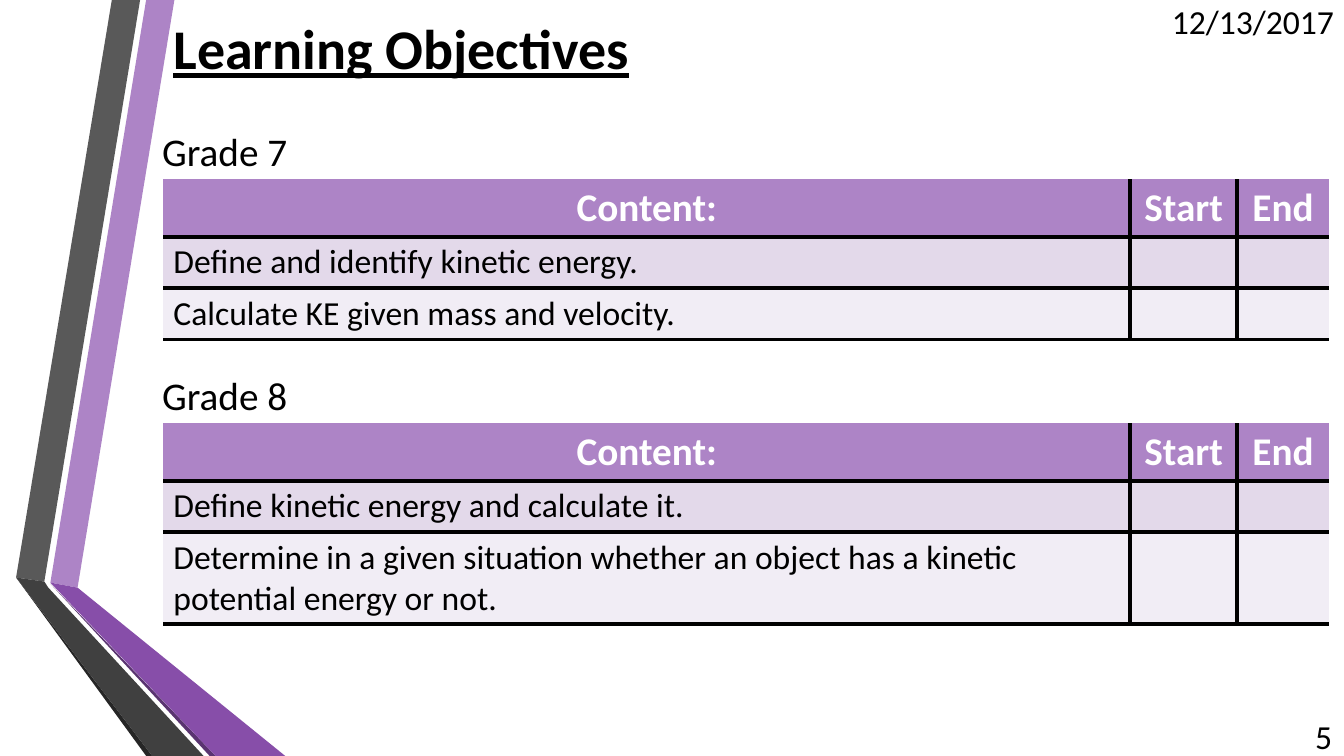
from dataclasses import dataclass

from lxml.etree import SubElement as Sub
from pptx import Presentation
from pptx.dml.color import RGBColor as Rgb
from pptx.enum.text import MSO_ANCHOR as Anchor, MSO_AUTO_SIZE as Fit, PP_ALIGN as Align
from pptx.oxml.ns import qn
from pptx.util import Inches, Pt

HUES = {
    "black": "000000", "white": "FFFFFF", "lilac": "AD84C6", "purple": "874EA9",
    "plum": "5A3471", "grey": "595959", "dark": "404040", "coal": "262626",
    "tint": "E3D9EA", "pale": "F1EDF5",
}
FONT = "Calibri"
HEADS = ("Content:", "Start", "End")
COLS = (9.59, 1.06, 0.91)
LEFT = 1.62


@dataclass
class Band:
    hue: str
    dots: list[tuple[float, float]]


@dataclass
class Label:
    text: str
    box: tuple[float, float, float, float]
    size: int
    align: Align = Align.LEFT
    anchor: Anchor = Anchor.MIDDLE
    wrap: bool = True


@dataclass
class Grade:
    name: str
    top: float
    goals: list[str]
    rows: tuple[float, ...]


BANDS = [
    Band("lilac", [(0.5, 5.78), (0.77, 5.83), (1.73, 0), (1.45, 0)]),
    Band("grey", [(1.39, 0), (1.11, 0), (0.16, 5.73), (0.44, 5.77)]),
    Band("coal", [(0.16, 5.73), (1.45, 7.5), (1.51, 7.5)]),
    Band("plum", [(0.5, 5.79), (2.08, 7.5), (2.14, 7.5)]),
    Band("purple", [(0.5, 5.78), (2.14, 7.5), (2.83, 7.5), (0.77, 5.83)]),
    Band("dark", [(2.02, 7.5), (0.48, 5.83), (0.44, 5.77), (0.16, 5.73), (1.51, 7.5)]),
]
GRADES = [
    Grade("Grade 7", 1.78,
          ["Define and identify kinetic energy.",
           "Calculate KE given mass and velocity."],
          (0.57, 0.51, 0.51)),
    Grade("Grade 8", 4.2,
          ["Define kinetic energy and calculate it.",
           "Determine in a given situation whether an object has a kinetic "
           "potential energy or not."],
          (0.57, 0.51, 0.91)),
]
MARKS = [
    Label("12/13/2017", (11.29, 0.01, 2.04, 0.4), 24, Align.RIGHT),
    Label("5", (12.58, 7.1, 0.73, 0.4), 24, Align.RIGHT),
]


def style(para, hue: str, align: Align = Align.LEFT, **looks) -> None:
    para.alignment = align
    for key, val in {"name": FONT, **looks}.items():
        setattr(para.font, key, val)
    para.font.color.rgb = Rgb.from_string(HUES[hue])


def place(shape, box: tuple[float, ...]) -> None:
    for key, val in zip(("left", "top", "width", "height"), box):
        setattr(shape, key, Inches(val))


def draw_band(slide, band: Band) -> None:
    dots = [(Inches(x), Inches(y)) for x, y in band.dots]
    pen = slide.shapes.build_freeform(*dots[0])
    pen.add_line_segments(dots[1:], close=True)
    shape = pen.convert_to_shape()
    shape.shadow.inherit = False
    shape.fill.solid()
    shape.fill.fore_color.rgb = Rgb.from_string(HUES[band.hue])
    shape.line.fill.background()


def draw_label(slide, label: Label) -> None:
    box = slide.shapes.add_textbox(*map(Inches, label.box))
    frame = box.text_frame
    frame.word_wrap = label.wrap
    frame.vertical_anchor = label.anchor
    frame.text = label.text
    style(frame.paragraphs[0], "black", label.align, size=Pt(label.size))


def set_edges(cell, edges: dict[str, bool]) -> None:
    props = cell._tc.get_or_add_tcPr()
    for spot, (tag, shown) in enumerate(edges.items()):
        line = props.makeelement(qn(f"a:{tag}"), {"w": str(Pt(3) if shown else 0)})
        props.insert(spot, line)
        if shown:
            fill = Sub(line, qn("a:solidFill"))
            Sub(fill, qn("a:srgbClr"), val=HUES["black"])
        else:
            Sub(line, qn("a:noFill"))


def draw_grade(slide, grade: Grade) -> None:
    draw_label(slide, Label(grade.name, (1.51, grade.top - 0.57, 1.45, 0.57), 28,
                            anchor=Anchor.TOP, wrap=False))
    cells = [HEADS] + [(goal, "", "") for goal in grade.goals]
    size = (LEFT, grade.top, sum(COLS), sum(grade.rows))
    table = slide.shapes.add_table(len(cells), len(COLS), *map(Inches, size)).table
    for col, width in zip(table.columns, COLS):
        col.width = Inches(width)
    for r, (texts, hue) in enumerate(zip(cells, ("lilac", "tint", "pale"))):
        table.rows[r].height = Inches(grade.rows[r])
        head = r == 0
        for c, text in enumerate(texts):
            cell = table.cell(r, c)
            cell.text = text
            cell.vertical_anchor = Anchor.MIDDLE if head else Anchor.TOP
            cell.fill.solid()
            cell.fill.fore_color.rgb = Rgb.from_string(HUES[hue])
            style(cell.text_frame.paragraphs[0], "white" if head else "black",
                  Align.CENTER if head else Align.LEFT,
                  size=Pt(28 if head else 24), bold=head)
            set_edges(cell, {"lnL": c > 0, "lnR": c < len(COLS) - 1,
                             "lnT": not head, "lnB": True})


def draw_title(slide) -> None:
    title = slide.shapes.title
    place(title, (LEFT, 0.01, 10.96, 0.92))
    frame = title.text_frame
    frame.text = "Learning Objectives"
    looks = {"auto_size": Fit.NONE, "word_wrap": True, "vertical_anchor": Anchor.MIDDLE}
    for key, val in looks.items():
        setattr(frame, key, val)
    style(frame.paragraphs[0], "black", size=Pt(40), bold=True, underline=True)
    # Bring the title in front of the bands
    title.element.getparent().append(title.element)


def main() -> None:
    deck = Presentation()
    deck.slide_width, deck.slide_height = Inches(13.33), Inches(7.5)
    slide = deck.slides.add_slide(deck.slide_layouts[5])
    # Folded ribbons on the left
    for band in BANDS:
        draw_band(slide, band)
    # Title, date and page number
    draw_title(slide)
    for mark in MARKS:
        draw_label(slide, mark)
    # One table of goals per grade
    for grade in GRADES:
        draw_grade(slide, grade)
    deck.save("out.pptx")


if __name__ == "__main__":
    main()
